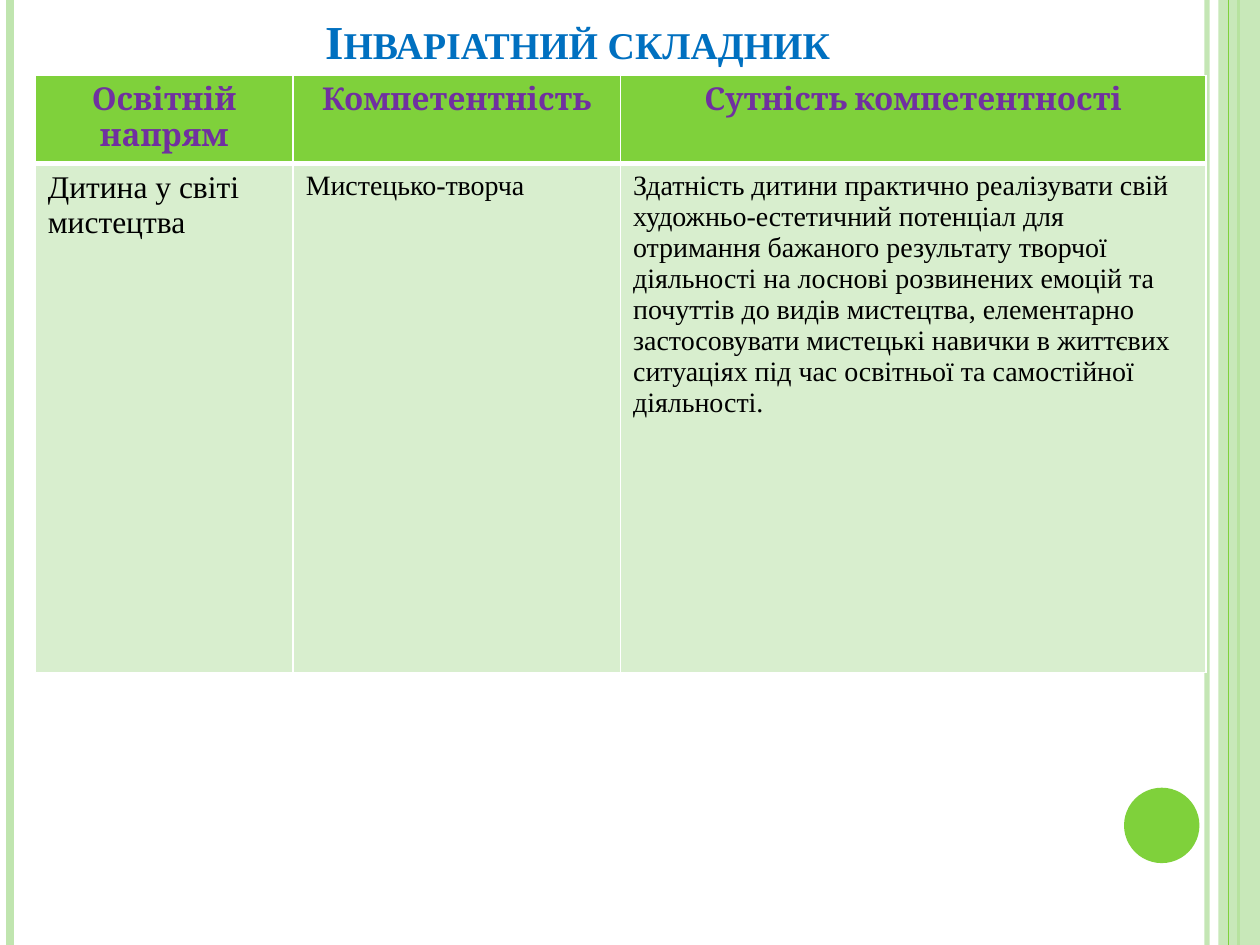
import dataclasses

import lxml.etree
import pptx
import pptx.dml.color
import pptx.enum.shapes
import pptx.enum.text
import pptx.oxml.ns
import pptx.util

Cm = pptx.util.Cm
Pt = pptx.util.Pt
qn = pptx.oxml.ns.qn
Align = pptx.enum.text.PP_ALIGN


@dataclasses.dataclass(frozen=True)
class Theme:
    green: str = "7FD13B"
    pale: str = "C0E5AF"
    mint: str = "D8EECE"
    blue: str = "0070C0"
    plum: str = "7030A0"
    black: str = "000000"
    white: str = "FFFFFF"
    serif: str = "Times New Roman"
    head: str = "Cambria"
    title: float = 27
    large: float = 18
    small: float = 16


def rgb(code):
    return pptx.dml.color.RGBColor.from_string(code)


def apply(item, values):
    for name, value in values.items():
        setattr(item, name, value)


def fade(fill, share):
    color = fill.find(".//" + qn("a:srgbClr"))
    lxml.etree.SubElement(color, qn("a:alpha"), val=str(share * 1000))


class Deck:
    """Holds the theme and current slide, and adds each kind of element."""

    def __init__(self, theme):
        self.theme = theme
        self.show = pptx.Presentation()
        apply(self.show, {"slide_width": Cm(25.4), "slide_height": Cm(19.05)})
        self.slide = self.show.slides.add_slide(self.show.slide_layouts[5])

    def text(self, frame, words, size, font, color, bold, align):
        part = frame.paragraphs[0]
        part.alignment = align
        run = part.add_run()
        run.text = words
        apply(run.font, {"size": Pt(size), "name": font, "bold": bold})
        run.font.color.rgb = rgb(color)
        return run

    def title(self, words, box):
        shape = self.slide.shapes.title
        apply(shape, dict(zip(("left", "top", "width", "height"), map(Cm, box))))
        apply(shape.text_frame, {
            "vertical_anchor": pptx.enum.text.MSO_ANCHOR.BOTTOM,
            "auto_size": pptx.enum.text.MSO_AUTO_SIZE.NONE,
            "word_wrap": True,
        })
        look = self.theme
        run = self.text(shape.text_frame, words, look.title, look.serif,
                        look.blue, True, Align.CENTER)
        run.font._element.set("cap", "small")

    def rule(self, left, width, color, share=100):
        line = self.slide.shapes.add_connector(
            pptx.enum.shapes.MSO_CONNECTOR.STRAIGHT,
            Cm(left), 0, Cm(left), self.show.slide_height)
        line.line.width = Pt(width)
        line.line.color.rgb = rgb(color)
        props = line._element.spPr
        if share < 100:
            fade(props, share)
        lxml.etree.SubElement(props, qn("a:effectLst"))

    def shape(self, kind, box, color, share=100):
        item = self.slide.shapes.add_shape(kind, *map(Cm, box))
        item.shadow.inherit = False
        item.fill.solid()
        item.fill.fore_color.rgb = rgb(color)
        item.line.fill.background()
        if share < 100:
            fade(item._element.spPr, share)

    def edge(self, cell, foot):
        props = cell._tc.get_or_add_tcPr()
        for side, width in (("L", 1), ("R", 1), ("T", 1), ("B", foot)):
            line = lxml.etree.SubElement(props, qn("a:ln" + side), w=str(int(Pt(width))))
            fill = lxml.etree.SubElement(line, qn("a:solidFill"))
            lxml.etree.SubElement(fill, qn("a:srgbClr"), val=self.theme.white)

    def table(self, rows, left, top, widths, heights):
        grid = self.slide.shapes.add_table(
            len(rows), len(widths), Cm(left), Cm(top),
            Cm(sum(widths)), Cm(sum(heights))).table
        for col, width in zip(grid.columns, widths):
            col.width = Cm(width)
        look = self.theme
        for y, texts in enumerate(rows):
            grid.rows[y].height = Cm(heights[y])
            for x, words in enumerate(texts):
                cell = grid.cell(y, x)
                self.edge(cell, 1 if y else 3)
                cell.fill.solid()
                cell.fill.fore_color.rgb = rgb(look.mint if y else look.green)
                if y:
                    size = look.small if x else look.large
                    style = size, look.serif, look.black, False, Align.LEFT
                else:
                    style = look.large, look.head, look.plum, True, Align.CENTER
                self.text(cell.text_frame, words, *style)


def main():
    look = Theme()
    deck = Deck(look)
    kinds = pptx.enum.shapes.MSO_SHAPE
    deck.rule(24.33, 3, look.pale, 93)
    deck.rule(0.2, 4.5, look.pale)
    deck.rule(24.97, 1.5, look.green)
    deck.shape(kinds.RECTANGLE, (24.56, 0, 0.84, 19.05), look.pale, 87)
    deck.rule(24.77, 0.75, look.green)
    deck.shape(kinds.OVAL, (22.66, 15.88, 1.52, 1.52), look.green)
    deck.title("Інваріатний складник", (1.27, 0.33, 20.75, 1.19))
    deck.table([
        ("Освітній напрям", "Компетентність", "Сутність компетентності"),
        ("Дитина у світі мистецтва", "Мистецько-творча",
         "Здатність дитини практично реалізувати свій художньо-естетичний "
         "потенціал для отримання бажаного результату творчої діяльності на "
         "лоснові розвинених емоцій та почуттів до видів мистецтва, "
         "елементарно застосовувати мистецькі навички в життєвих ситуаціях "
         "під час освітньої та самостійної діяльності."),
    ], 0.71, 1.52, (5.2, 6.6, 11.8), (1.78, 10.26))
    deck.show.save("out.pptx")


if __name__ == "__main__":
    main()
